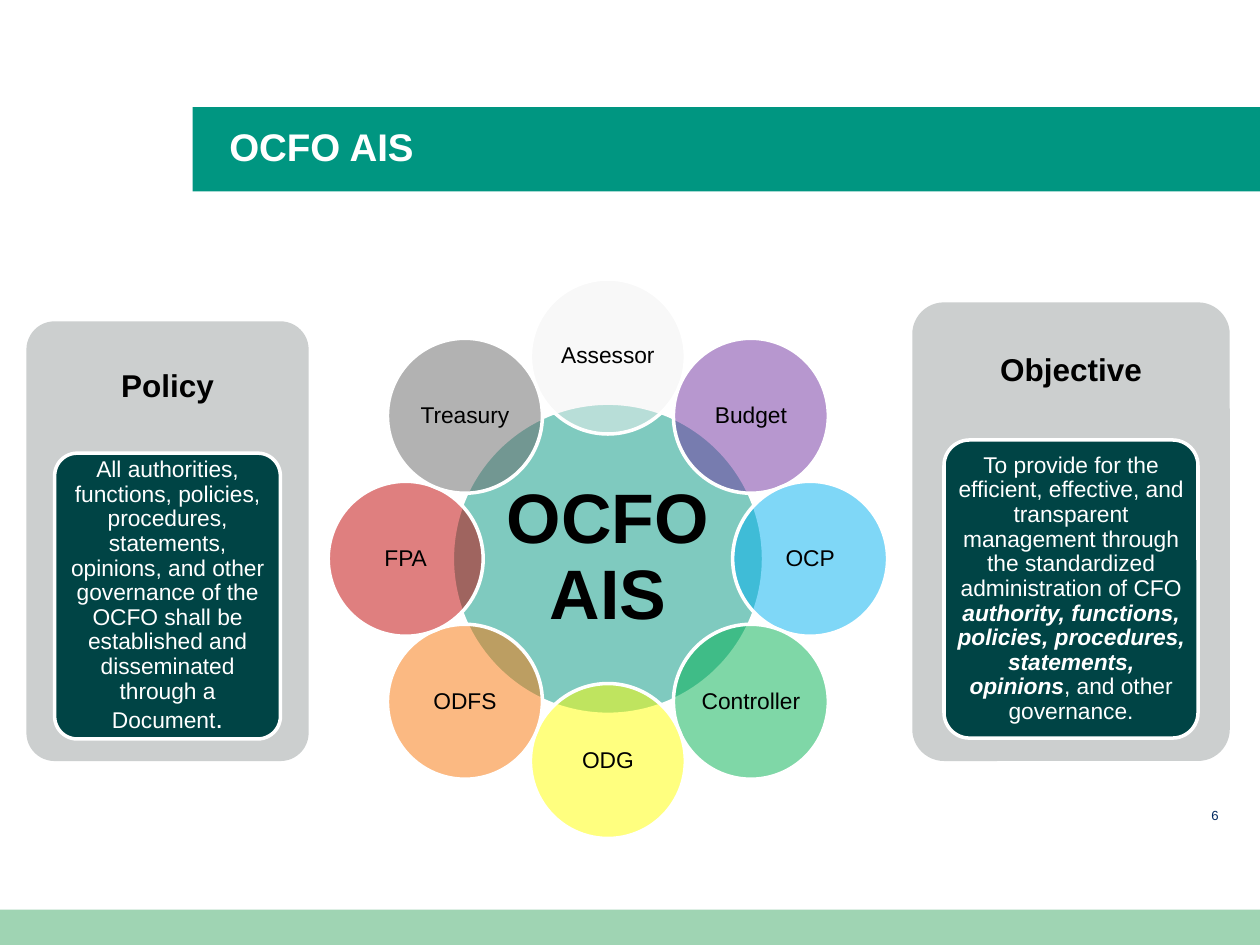
import math

import lxml.etree
import pptx
import pptx.dml.color
import pptx.enum.shapes
import pptx.enum.text
import pptx.oxml.ns
import pptx.util

RGBColor = pptx.dml.color.RGBColor
SHAPE = pptx.enum.shapes.MSO_SHAPE
ALIGN = pptx.enum.text.PP_ALIGN
ANCHOR = pptx.enum.text.MSO_ANCHOR

WHITE = RGBColor(0xFF, 0xFF, 0xFF)
BLACK = RGBColor(0x00, 0x00, 0x00)
GREEN = RGBColor(0x00, 0x96, 0x81)
MINT = RGBColor(0x9F, 0xD4, 0xB3)
NAVY = RGBColor(0x00, 0x29, 0x60)
PANEL_GREY = RGBColor(0xCC, 0xCF, 0xCF)
DARK_TEAL = RGBColor(0x00, 0x44, 0x45)

OFFICES = [
    ("Assessor", RGBColor(0xF2, 0xF2, 0xF2)),
    ("Budget", RGBColor(0x70, 0x30, 0xA0)),
    ("OCP", RGBColor(0x00, 0xB0, 0xF0)),
    ("Controller", RGBColor(0x00, 0xB0, 0x50)),
    ("ODG", RGBColor(0xFF, 0xFF, 0x00)),
    ("ODFS", RGBColor(0xF9, 0x74, 0x07)),
    ("FPA", RGBColor(0xC0, 0x00, 0x00)),
    ("Treasury", RGBColor(0x66, 0x66, 0x66)),
]

POLICY = [
    ("All authorities, functions, policies, procedures, statements, opinions, "
     "and other governance of the OCFO shall be established and disseminated "
     "through a Document", {}),
    (".", {"size": 16}),
]
OBJECTIVE = [
    ("To provide for the efficient, effective, and transparent management "
     "through the standardized administration of CFO ", {}),
    ("authority, functions, policies, procedures, statements, opinions",
     {"bold": True, "italic": True}),
    (", and other governance.", {}),
]


def write_text(shape, runs, align=ALIGN.CENTER, anchor=ANCHOR.MIDDLE,
               insets=(0.07, 0.07), spacing=0.9, **style):
    frame = shape.text_frame
    frame.word_wrap = True
    frame.vertical_anchor = anchor
    frame.margin_left = frame.margin_right = pptx.util.Inches(insets[0])
    frame.margin_top = frame.margin_bottom = pptx.util.Inches(insets[1])
    paragraph = frame.paragraphs[0]
    paragraph.alignment = align
    paragraph.line_spacing = spacing
    for text, changes in [(runs, {})] if isinstance(runs, str) else runs:
        look = {"size": 13, "color": BLACK, "bold": False, "italic": False,
                **style, **changes}
        run = paragraph.add_run()
        run.text = text
        run.font.name = "Arial"
        run.font.size = pptx.util.Pt(look["size"])
        run.font.bold = look["bold"]
        run.font.italic = look["italic"]
        run.font.color.rgb = look["color"]


class SlideBuilder:
    columns, rows = 100, 75

    def __init__(self, presentation):
        self.cell_width = presentation.slide_width / self.columns
        self.cell_height = presentation.slide_height / self.rows
        self.slide = presentation.slides.add_slide(presentation.slide_layouts[5])

    def place(self, left, top, width, height):
        return [round(left * self.cell_width), round(top * self.cell_height),
                round(width * self.cell_width), round(height * self.cell_height)]

    def shape(self, kind, area, color, outlined=False, alpha=None):
        shape = self.slide.shapes.add_shape(kind, *self.place(*area))
        shape.shadow.inherit = False
        shape.fill.solid()
        shape.fill.fore_color.rgb = color
        if alpha is not None:
            fill_color = shape.element.spPr.find(
                "./" + pptx.oxml.ns.qn("a:solidFill"))[0]
            lxml.etree.SubElement(fill_color, pptx.oxml.ns.qn("a:alpha"),
                                  val=str(alpha * 1000))
        if outlined:
            shape.line.color.rgb = WHITE
            shape.line.width = pptx.util.Pt(2)
        else:
            shape.line.fill.background()
        return shape

    def text(self, area, runs, **style):
        write_text(self.slide.shapes.add_textbox(*self.place(*area)), runs, **style)

    def title(self, area, text):
        title = self.slide.shapes.title
        title.left, title.top, title.width, title.height = self.place(*area)
        write_text(title, text, align=ALIGN.LEFT, anchor=ANCHOR.TOP,
                   insets=(0, 0), spacing=1, size=22, bold=True, color=WHITE)
        self.slide.shapes.element.append(title.element)

    def circle(self, center, diameter, color, text, inset, **style):
        area = (center[0] - diameter / 2, center[1] - diameter / 2,
                diameter, diameter)
        circle = self.shape(SHAPE.OVAL, area, color, outlined=True, alpha=50)
        write_text(circle, text, insets=(inset, inset), **style)

    def panel(self, area, heading, body):
        left, top, width, height = area
        card = self.shape(SHAPE.ROUNDED_RECTANGLE, area, PANEL_GREY)
        card.adjustments[0] = 0.1
        self.text((left, top, width, 0.3 * height), heading, size=18, bold=True)
        inner_area = (left + 0.1 * width, top + 0.3 * height,
                      0.8 * width, 0.65 * height)
        inner = self.shape(SHAPE.ROUNDED_RECTANGLE, inner_area, DARK_TEAL,
                           outlined=True)
        inner.adjustments[0] = 0.1
        write_text(inner, body, insets=(0.04, 0.03), color=WHITE)

    def wheel(self, center, radius, hub, petals):
        self.circle(center, 24.7, GREEN, hub, 0.06, size=40, bold=True)
        for index, (name, color) in enumerate(petals):
            angle = 2 * math.pi * index / len(petals)
            petal_center = (center[0] + radius * math.sin(angle),
                            center[1] - radius * math.cos(angle))
            self.circle(petal_center, 12.3, color, name, 0.02)


def main():
    presentation = pptx.Presentation()
    presentation.slide_width = pptx.util.Inches(10)
    presentation.slide_height = pptx.util.Inches(7.5)
    builder = SlideBuilder(presentation)
    builder.shape(SHAPE.RECTANGLE, (15.3, 8.5, 84.7, 6.7), GREEN)
    builder.shape(SHAPE.RECTANGLE, (0, 72.2, 100, 2.8), MINT)
    builder.text((80.2, 63.6, 17.5, 2), "6", align=ALIGN.RIGHT, anchor=ANCHOR.TOP,
                 insets=(0.1, 0.05), spacing=1, size=7.5, color=NAVY)
    builder.title((18.2, 9.8, 72.1, 3.7), "OCFO AIS")
    builder.panel((2.1, 25.5, 22.4, 34.9), "Policy", POLICY)
    builder.wheel((48.25, 44.35), 16.05, "OCFO AIS", OFFICES)
    builder.panel((72.4, 24, 25.2, 36.4), "Objective", OBJECTIVE)
    presentation.save("out.pptx")


if __name__ == "__main__":
    main()
